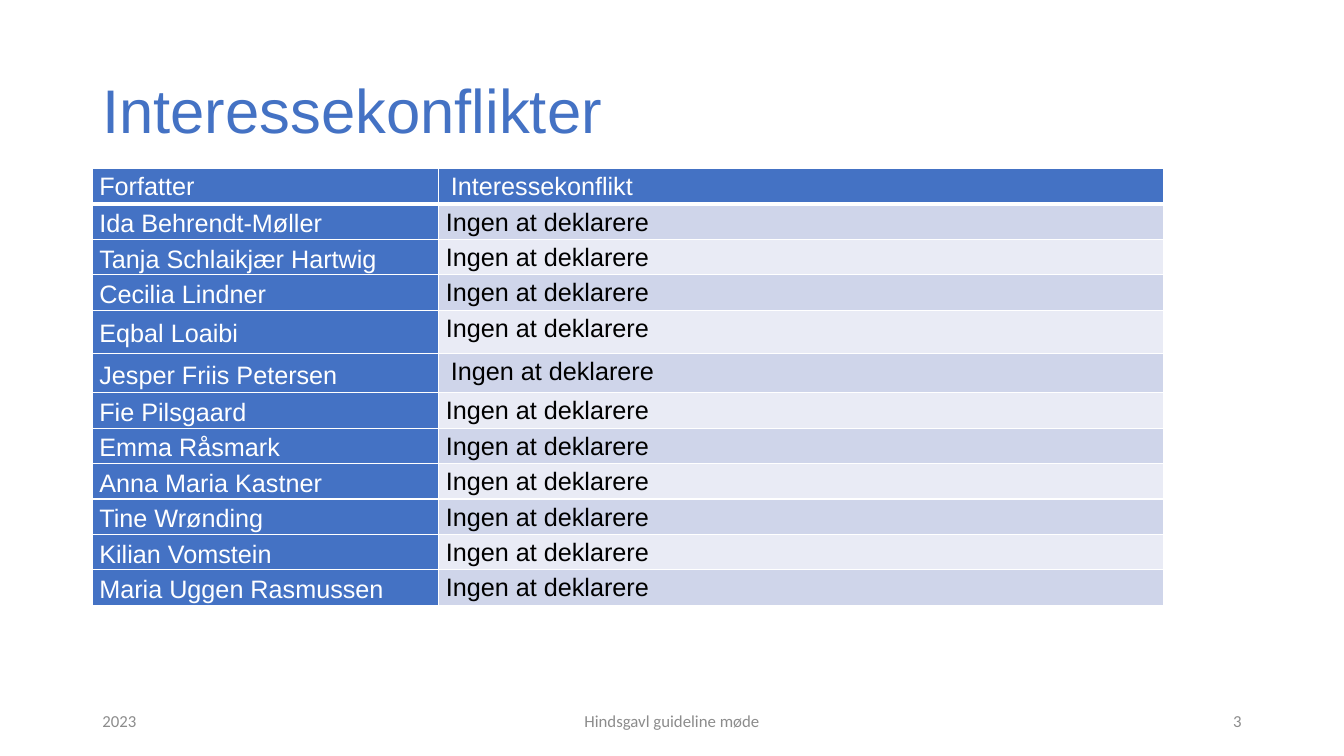
from lxml import etree
from pptx import Presentation
from pptx.dml.color import RGBColor
from pptx.enum import text
from pptx.oxml import ns
from pptx.util import Pt

COLORS = {"blue": "4472C4", "white": "FFFFFF", "black": "000000",
          "grey": "8C8C8C", "dark_band": "CFD5EA", "light_band": "E9EBF5"}
ANSWER = "Ingen at deklarere"
AUTHORS = ["Ida Behrendt-Møller", "Tanja Schlaikjær Hartwig", "Cecilia Lindner",
           "Eqbal Loaibi", "Jesper Friis Petersen", "Fie Pilsgaard", "Emma Råsmark",
           "Anna Maria Kastner", "Tine Wrønding", "Kilian Vomstein",
           "Maria Uggen Rasmussen"]
INDENTED = {"Forfatter", "Jesper Friis Petersen"}
ROW_HEIGHT = 25.3
TALL_ROWS = {"Eqbal Loaibi": 31, "Jesper Friis Petersen": 28}
AUTHOR_SHARE = 0.3235


def add_span(para, words, size, font, color):
    span = para.add_run()
    span.text = words
    span.font.size = Pt(size)
    span.font.name = font
    span.font.color.rgb = RGBColor.from_string(COLORS[color])


def add_label(page, box, words, size, font, color,
              align=text.PP_ALIGN.LEFT, spacing=1.0):
    frame = page.shapes.add_textbox(*map(Pt, box)).text_frame
    frame.word_wrap = True
    frame.vertical_anchor = text.MSO_ANCHOR.MIDDLE
    para = frame.paragraphs[0]
    para.alignment = align
    para.line_spacing = spacing
    add_span(para, words, size, font, color)


def add_borders(cell, bottom):
    """Draw white lines round a cell; only the bottom width varies."""
    properties = cell._tc.get_or_add_tcPr()
    for side, width in (("L", 1), ("R", 1), ("T", 1), ("B", bottom)):
        line = etree.SubElement(properties, ns.qn(f"a:ln{side}"), w=str(Pt(width)))
        fill = etree.SubElement(line, ns.qn("a:solidFill"))
        etree.SubElement(fill, ns.qn("a:srgbClr"), val=COLORS["white"])


def fill_cell(cell, words, fill, color, anchor, indent=0, bottom=1):
    add_borders(cell, bottom)
    cell.fill.solid()
    cell.fill.fore_color.rgb = RGBColor.from_string(COLORS[fill])
    cell.margin_left = cell.margin_right = Pt(5)
    cell.margin_top = cell.margin_bottom = 0
    cell.vertical_anchor = anchor
    para = cell.text_frame.paragraphs[0]
    para.line_spacing = 1.15
    if indent:
        para._p.get_or_add_pPr().set("marL", str(Pt(indent)))
    add_span(para, words, 18, "Arial", color)


def add_conflict_table(page, box):
    left, top, width, height = box
    entries = [("Forfatter", "Interessekonflikt")]
    entries += [(author, ANSWER) for author in AUTHORS]
    table = page.shapes.add_table(len(entries), 2, *map(Pt, box)).table
    table.columns[0].width = Pt(width * AUTHOR_SHARE)
    table.columns[1].width = Pt(width * (1 - AUTHOR_SHARE))
    anchors = text.MSO_ANCHOR
    for index, (author, conflict) in enumerate(entries):
        header = index == 0
        table.rows[index].height = Pt(TALL_ROWS.get(author, ROW_HEIGHT))
        band = "dark_band" if index % 2 else "light_band"
        bottom = 3 if header else 1
        fill_cell(table.cell(index, 0), author, "blue", "white",
                  anchors.TOP if header else anchors.MIDDLE, bottom=bottom)
        fill_cell(table.cell(index, 1), conflict, "blue" if header else band,
                  "white" if header else "black", anchors.TOP,
                  indent=3.6 if author in INDENTED else 0, bottom=bottom)


def add_footer(page, box):
    left, top, width, height = box
    side, middle = 216, 324
    align = text.PP_ALIGN
    for words, start, span, side_align in (
            ("2023", left, side, align.LEFT),
            ("Hindsgavl guideline møde", left + (width - middle) / 2, middle, align.CENTER),
            ("3", left + width - side, side, align.RIGHT)):
        add_label(page, (start, top, span, height), words, 12, "Calibri", "grey", side_align)


def main():
    deck = Presentation()
    deck.slide_width, deck.slide_height = Pt(960), Pt(540)
    page = deck.slides.add_slide(deck.slide_layouts[6])
    add_label(page, (66, 28.75, 828, 104.4), "Interessekonflikter", 44, "Arial", "blue",
              spacing=0.9)
    add_footer(page, (66, 500.5, 828, 28.75))
    add_conflict_table(page, (66, 120.5, 765, 312))
    deck.save("out.pptx")


if __name__ == "__main__":
    main()
